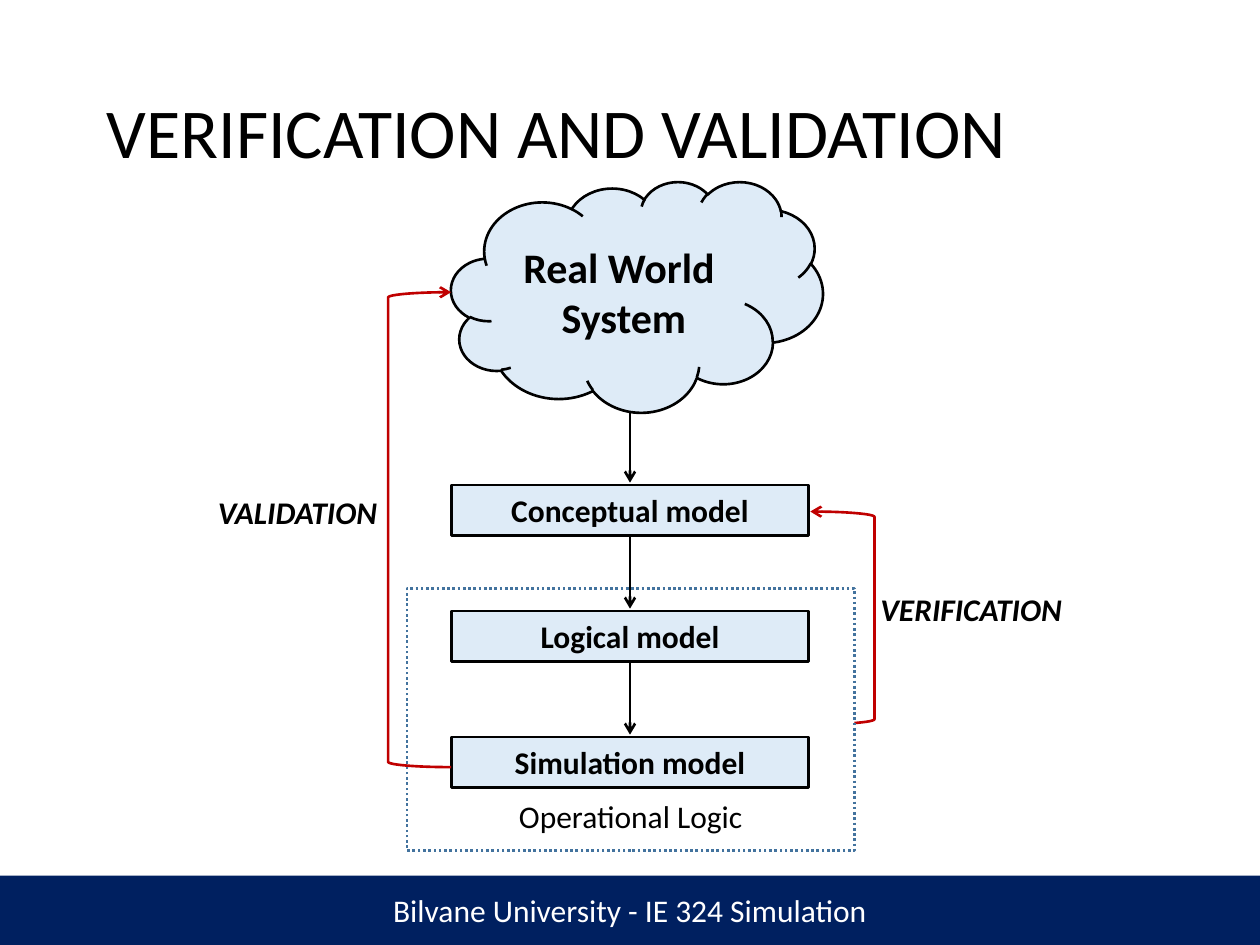
"""Build the verification and validation slide."""
from lxml import etree
from pptx import Presentation
from pptx.dml.color import RGBColor
from pptx.enum.dml import MSO_LINE
from pptx.enum.shapes import MSO_CONNECTOR, MSO_SHAPE
from pptx.enum.text import MSO_ANCHOR, PP_ALIGN
from pptx.oxml.ns import qn
from pptx.util import Pt

RECTANGLE, CLOUD = MSO_SHAPE.RECTANGLE, MSO_SHAPE.CLOUD
BRACKET = MSO_SHAPE.RIGHT_BRACKET
STRAIGHT, DOTTED = MSO_CONNECTOR.STRAIGHT, MSO_LINE.ROUND_DOT
MIDDLE, BOTTOM = MSO_ANCHOR.MIDDLE, MSO_ANCHOR.BOTTOM
LEFT, CENTER = PP_ALIGN.LEFT, PP_ALIGN.CENTER

BLACK = RGBColor(0x00, 0x00, 0x00)
WHITE = RGBColor(0xFF, 0xFF, 0xFF)
NAVY = RGBColor(0x00, 0x20, 0x60)
PALE_BLUE = RGBColor(0xDE, 0xEB, 0xF7)
STEEL_BLUE = RGBColor(0x43, 0x73, 0x9E)
RED = RGBColor(0xC0, 0x00, 0x00)

FONT = "Calibri"
LINE_WIDTH = 1.5
TITLE = "VERIFICATION AND VALIDATION"
FOOTER = "Bilvane University - IE 324 Simulation"
SYSTEM = ["Real World ", "System"]
MODELS = ["Conceptual model", "Logical model", "Simulation model"]
GROUP_NAME = "Operational Logic"
LABELS = [
    ("VALIDATION", (117.4, 279.4, 113, 26.6)),
    ("VERIFICATION", (496, 334.8, 131.8, 26.6)),
]

FOOTER_AREA = (0, 500.4, 720, 39.6)
TITLE_AREA = (54, 23.8, 581.8, 108)
CLOUD_AREA = (257.8, 103.7, 212.4, 131.8)
GROUP_AREA = (232.6, 336.2, 255.6, 149.8)
VERIFICATION_AREA = (463, 292.3, 36.7, 121.7)
VALIDATION_AREA = (221.8, 167, 36, 271.4)
MODEL_LEFT, MODEL_TOP, MODEL_WIDTH, MODEL_HEIGHT = 258, 277.2, 204, 28.8
MODEL_STEP = 72
ARROW_X, ARROW_TOP, ARROW_LENGTH = 360, 234, 41.8


def write(box, lines, size, color=BLACK, align=CENTER, anchor=MIDDLE,
          bold=False, italic=False):
    frame = box.text_frame
    frame.word_wrap = True
    frame.vertical_anchor = anchor
    for index, line in enumerate(lines):
        para = frame.add_paragraph() if index else frame.paragraphs[0]
        para.alignment = align
        span = para.add_run()
        span.text = line
        font = span.font
        font.name, font.size = FONT, Pt(size)
        font.bold, font.italic = bold, italic
        font.color.rgb = color
    return frame


def add_box(page, kind, area, fill=None, line=None):
    box = page.shapes.add_shape(kind, *map(Pt, area))
    box.shadow.inherit = False
    if fill is None:
        box.fill.background()
    else:
        box.fill.solid()
        box.fill.fore_color.rgb = fill
    if line is None:
        box.line.fill.background()
    else:
        box.line.color.rgb = line
        box.line.width = Pt(LINE_WIDTH)
    return box


def add_label(page, text, area, size, **style):
    box = page.shapes.add_textbox(*map(Pt, area))
    return write(box, [text], size, align=LEFT, **style)


def add_arrowhead(item, end):
    outline = item.line._get_or_add_ln()
    etree.SubElement(outline, qn(f"a:{end}"), type="arrow")


def add_feedback(page, area, mirrored=False):
    bracket = add_box(page, BRACKET, area, line=RED)
    add_arrowhead(bracket, "headEnd")
    if mirrored:
        bracket._element.spPr.find(qn("a:xfrm")).set("flipH", "1")


def add_down_arrow(page, top):
    arrow = page.shapes.add_connector(
        STRAIGHT, Pt(ARROW_X), Pt(top), Pt(ARROW_X), Pt(top + ARROW_LENGTH))
    arrow.line.color.rgb = BLACK
    arrow.line.width = Pt(LINE_WIDTH)
    add_arrowhead(arrow, "tailEnd")
    etree.SubElement(arrow._element.spPr, qn("a:effectLst"))


def main():
    deck = Presentation()
    deck.slide_width, deck.slide_height = Pt(720), Pt(540)
    page = deck.slides.add_slide(deck.slide_layouts[6])

    footer = add_box(page, RECTANGLE, FOOTER_AREA, NAVY)
    write(footer, [FOOTER], 18, WHITE)
    add_feedback(page, VERIFICATION_AREA)

    group = add_box(page, RECTANGLE, GROUP_AREA, WHITE, STEEL_BLUE)
    group.line.dash_style = DOTTED
    write(group, [GROUP_NAME], 18, anchor=BOTTOM).margin_bottom = Pt(9)

    title = add_label(page, TITLE, TITLE_AREA, 40)
    title.paragraphs[0].line_spacing = 0.9

    for index, model in enumerate(MODELS):
        offset = index * MODEL_STEP
        area = (MODEL_LEFT, MODEL_TOP + offset, MODEL_WIDTH, MODEL_HEIGHT)
        box = add_box(page, RECTANGLE, area, PALE_BLUE, BLACK)
        write(box, [model], 18, bold=True)
        add_down_arrow(page, ARROW_TOP + offset)

    cloud = add_box(page, CLOUD, CLOUD_AREA, PALE_BLUE, BLACK)
    write(cloud, SYSTEM, 24, bold=True)
    add_feedback(page, VALIDATION_AREA, mirrored=True)

    for text, area in LABELS:
        add_label(page, text, area, 18, bold=True, italic=True)

    deck.save("out.pptx")


if __name__ == "__main__":
    main()
